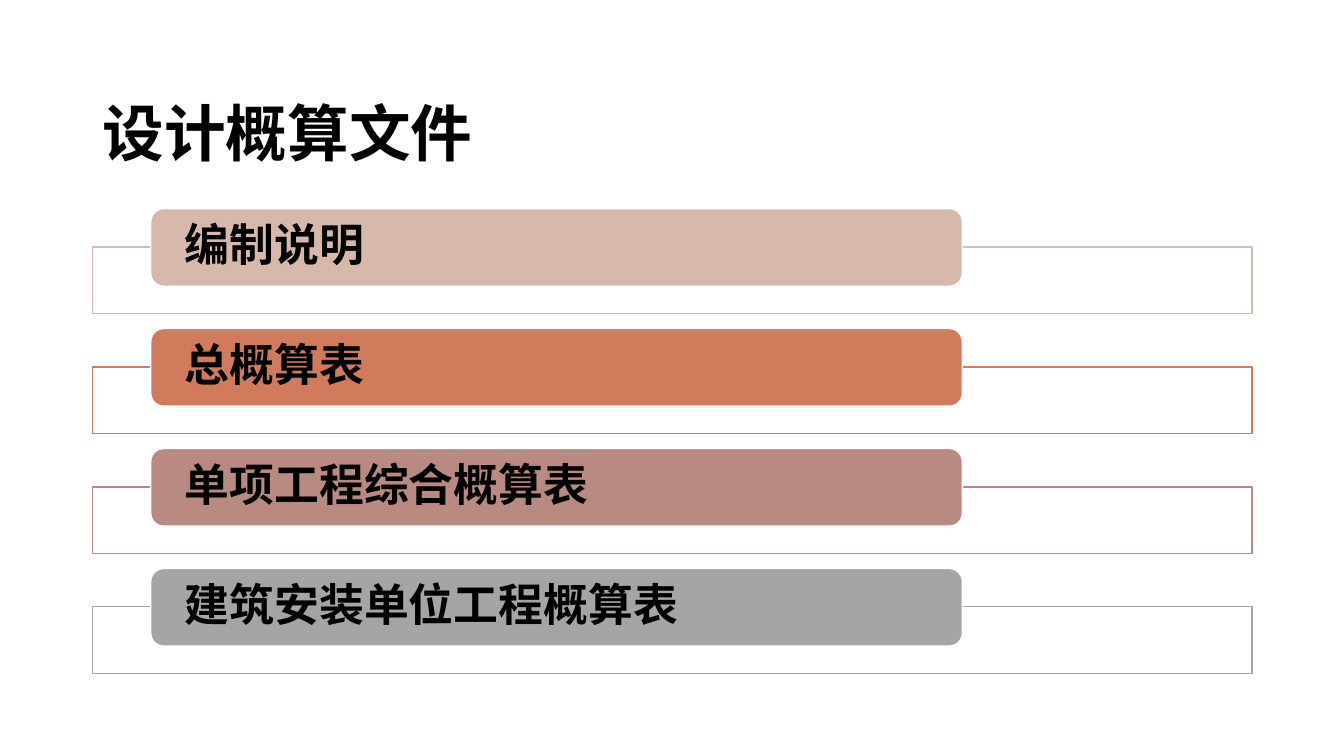
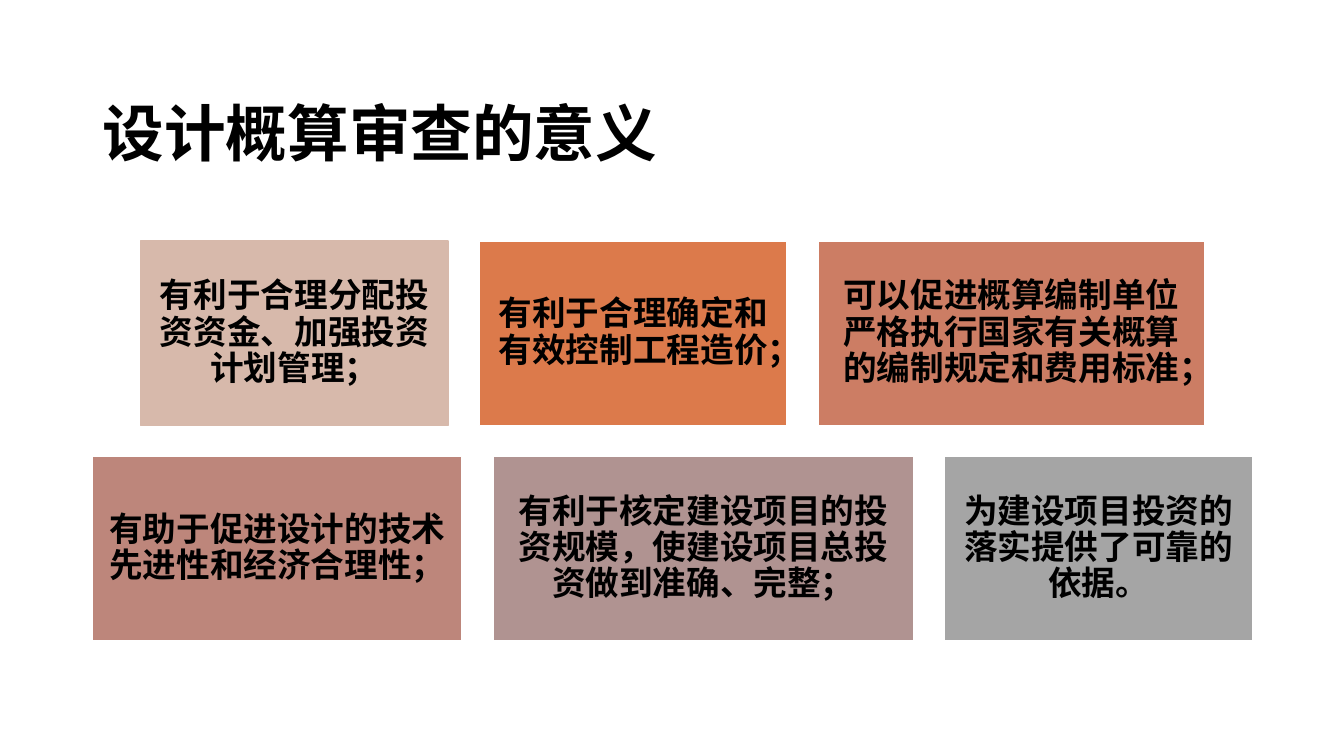
import pptx
import pptx.util
import pptx.dml.color
import pptx.enum.lang
import pptx.enum.shapes
import pptx.enum.text
import pptx.oxml.ns
import lxml.etree

Inches, Pt = pptx.util.Inches, pptx.util.Pt
ALIGN = pptx.enum.text.PP_ALIGN
SHAPE = pptx.enum.shapes.MSO_SHAPE

COLORS = {
    "white": "FFFFFF", "text": "000000", "sand": "D7B9AB", "rust": "D17B5C",
    "rose": "B98A82", "gray": "A5A5A5", "orange": "DC7A4B", "coral": "CC7D64",
    "clay": "BD867B", "mauve": "B09391",
}
CJK_FONT = "Noto Sans CJK SC"

# Shared text styles: font, paragraph and margins (left, top, right, bottom)
TITLE_STYLE = {
    "font": {"name": "Times New Roman", "size": Pt(44)},
    "paragraph": {"alignment": ALIGN.JUSTIFY, "line_spacing": 1.5},
    "margins": (0.1, 0.05, 0.1, 0.05),
}
LABEL_STYLE = {
    "font": {"name": CJK_FONT, "size": Pt(32)},
    "paragraph": {"alignment": ALIGN.LEFT, "line_spacing": 0.9},
    "margins": (0.3, 0, 0.3, 0),
}
CARD_STYLE = {
    "font": {"name": CJK_FONT, "size": Pt(24)},
    "paragraph": {"alignment": ALIGN.CENTER, "line_spacing": 0.9},
    "margins": (0.1, 0.1, 0.1, 0.1),
}

# Regions: left, top, width, height
TITLE_BOX = (0.92, 0.4, 11.5, 1.45)
LIST_BOX = (0.92, 2.07, 11.5, 4.61)
CARDS_BOX = (0.92, 2.39, 11.5, 3.97)

DOCUMENTS = [
    ("编制说明", "sand"),
    ("总概算表", "rust"),
    ("单项工程综合概算表", "rose"),
    ("建筑安装单位工程概算表", "gray"),
]

# Rows of cards: text, width, fill, line
BENEFITS = [
    [
        ("有利于合理分配投资资金、加强投资计划管理；", 3.05, "sand", "sand"),
        ("有利于合理确定和有效控制工程造价；", 3.05, "orange", "white"),
        ("可以促进概算编制单位严格执行国家有关概算的编制规定和费用标准；", 3.83, "coral", "white"),
    ],
    [
        ("有助于促进设计的技术先进性和经济合理性；", 3.66, "clay", "white"),
        ("有利于核定建设项目的投资规模，使建设项目总投资做到准确、完整；", 4.17, "mauve", "white"),
        ("为建设项目投资的落实提供了可靠的依据。", 3.05, "gray", "white"),
    ],
]


def rgb(name):
    return pptx.dml.color.RGBColor.from_string(COLORS[name])


def set_attributes(target, values):
    for name, value in values.items():
        setattr(target, name, value)


def write_text(holder, text, style):
    frame = holder.text_frame
    sides = ("margin_left", "margin_top", "margin_right", "margin_bottom")
    set_attributes(frame, dict(zip(sides, map(Inches, style["margins"]))))
    set_attributes(frame, {
        "word_wrap": True,
        "vertical_anchor": pptx.enum.text.MSO_ANCHOR.MIDDLE,
    })
    paragraph = frame.paragraphs[0]
    set_attributes(paragraph, style["paragraph"])
    run = paragraph.add_run()
    run.text = text
    set_attributes(run.font, {
        **style["font"],
        "bold": True,
        "language_id": pptx.enum.lang.MSO_LANGUAGE_ID.SIMPLIFIED_CHINESE,
    })
    run.font.color.rgb = rgb("text")
    # East Asian typeface
    east_asian = lxml.etree.SubElement(
        run.font._element, pptx.oxml.ns.qn("a:ea"))
    east_asian.set("typeface", CJK_FONT)


def add_block(slide, kind, box, fill, line):
    block = slide.shapes.add_shape(kind, *map(Inches, box))
    block.shadow.inherit = False
    block.fill.solid()
    block.fill.fore_color.rgb = rgb(fill)
    block.line.color.rgb = rgb(line)
    block.line.width = Pt(1)
    return block


def set_opacity(block, percent):
    color = block._element.spPr.find(
        pptx.oxml.ns.qn("a:solidFill") + "/" + pptx.oxml.ns.qn("a:srgbClr"))
    alpha = lxml.etree.SubElement(color, pptx.oxml.ns.qn("a:alpha"))
    alpha.set("val", str(percent * 1000))


def add_titled_slide(deck, title):
    slide = deck.slides.add_slide(deck.slide_layouts[6])
    heading = slide.shapes.add_textbox(*map(Inches, TITLE_BOX))
    write_text(heading, title, TITLE_STYLE)
    return slide


def add_document_list(slide, box, documents):
    left, top, width, height = box
    label_height, frame_height, frame_drop = 0.77, 0.66, 0.38
    entry_height = frame_drop + frame_height
    pitch = (height - entry_height) / (len(documents) - 1)
    for index, (text, color) in enumerate(documents):
        entry_top = top + index * pitch
        # Outlined frame behind the label
        frame = add_block(
            slide, SHAPE.RECTANGLE,
            (left, entry_top + frame_drop, width, frame_height), "white", color)
        set_opacity(frame, 90)
        # Label over the frame's top edge
        label = add_block(
            slide, SHAPE.ROUNDED_RECTANGLE,
            (left + width * 0.05, entry_top, width * 0.7, label_height),
            color, "white")
        write_text(label, text, LABEL_STYLE)


def add_card_rows(slide, box, rows):
    left, top, width, height = box
    gap = 0.31
    card_height = (height - gap * (len(rows) - 1)) / len(rows)
    for index, row in enumerate(rows):
        # Each row is centred in the box
        row_width = sum(card[1] for card in row) + gap * (len(row) - 1)
        card_left = left + (width - row_width) / 2
        card_top = top + index * (card_height + gap)
        for text, card_width, fill, line in row:
            card = add_block(
                slide, SHAPE.RECTANGLE,
                (card_left, card_top, card_width, card_height), fill, line)
            write_text(card, text, CARD_STYLE)
            card_left += card_width + gap


def main():
    deck = pptx.Presentation()
    deck.slide_width, deck.slide_height = Inches(13.33), Inches(7.5)

    add_document_list(add_titled_slide(deck, "设计概算文件"), LIST_BOX, DOCUMENTS)
    add_card_rows(add_titled_slide(deck, "设计概算审查的意义"), CARDS_BOX, BENEFITS)

    deck.save("out.pptx")


if __name__ == "__main__":
    main()
